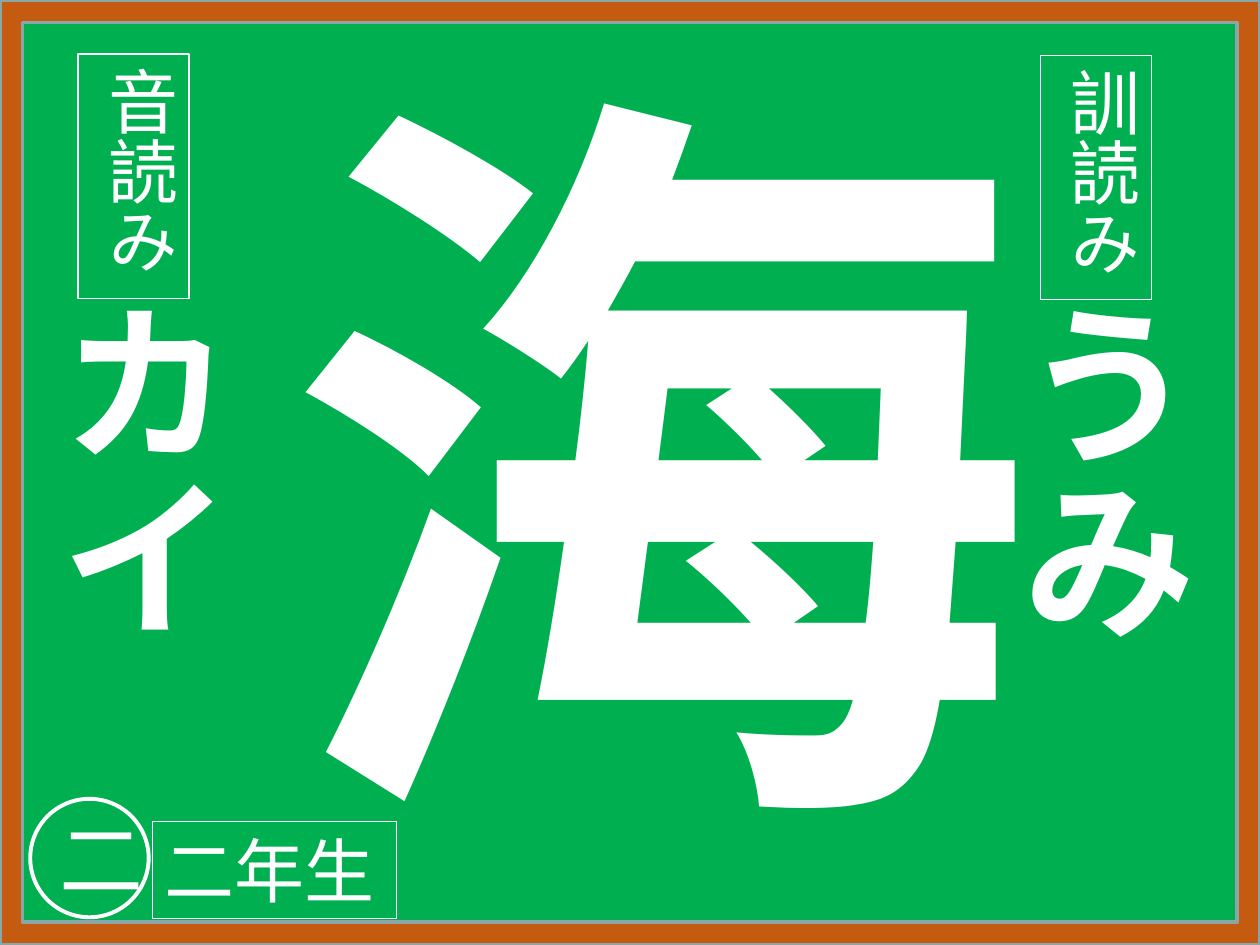
from lxml.etree import SubElement
from pptx import Presentation
from pptx.dml.color import RGBColor
from pptx.enum.shapes import MSO_SHAPE
from pptx.enum.text import MSO_ANCHOR, MSO_AUTO_SIZE, PP_ALIGN
from pptx.oxml.ns import qn
from pptx.util import Inches, Pt

FONT = "Noto Sans CJK JP"
WHITE = "FFFFFF"
BOARD_GREEN = "00B050"
WOOD = "C55A11"
WOOD_EDGE = "8AA6A8"


def color(value):
    return RGBColor.from_string(value)


def write(shape, text, size, bold=False, centered=False, vertical=False,
          middle=False, grow=False, wrap=True):
    frame = shape.text_frame
    frame.word_wrap = wrap
    frame.auto_size = MSO_AUTO_SIZE.SHAPE_TO_FIT_TEXT if grow else MSO_AUTO_SIZE.NONE
    frame.vertical_anchor = MSO_ANCHOR.MIDDLE if middle else MSO_ANCHOR.TOP
    if vertical:
        frame._txBody.bodyPr.set("vert", "eaVert")
    paragraph = frame.paragraphs[0]
    paragraph.alignment = PP_ALIGN.CENTER if centered else PP_ALIGN.LEFT
    paragraph.add_run().text = text
    font = paragraph.font
    font.size = Pt(size)
    font.bold = bold
    font.color.rgb = color(WHITE)
    font.name = FONT
    SubElement(font._element, qn("a:ea")).set("typeface", FONT)


def add_outline(page, kind, left, top, width, height, line, weight, fill=None):
    shape = page.shapes.add_shape(
        kind, Inches(left), Inches(top), Inches(width), Inches(height))
    shape.shadow.inherit = False
    if fill:
        shape.fill.solid()
        shape.fill.fore_color.rgb = color(fill)
    else:
        shape.fill.background()
    shape.line.color.rgb = color(line)
    shape.line.width = Pt(weight)
    return shape


def add_board_frame(page):
    frame = add_outline(page, MSO_SHAPE.FRAME, 0, 0, 10, 7.5, WOOD_EDGE, 2, WOOD)
    frame.adjustments[0] = 0.024


def add_vertical_text(page, text, left, top, width, height, size, **layout):
    box = page.shapes.add_textbox(
        Inches(left), Inches(top), Inches(width), Inches(height))
    write(box, text, size, bold=True, centered=True, vertical=True, **layout)


def add_label(page, text, left, top, width, height, vertical=False):
    label = add_outline(
        page, MSO_SHAPE.RECTANGLE, left, top, width, height, WHITE, 0.75)
    write(label, text, 40, vertical=vertical, grow=True)


def add_grade_badge(page, text):
    badge = add_outline(page, MSO_SHAPE.OVAL, 0.24, 6.34, 0.94, 0.94, WHITE, 2.25)
    write(badge, text, 48, centered=True, middle=True)


def main():
    deck = Presentation()
    deck.slide_width = Inches(10)
    deck.slide_height = Inches(7.5)
    page = deck.slides.add_slide(deck.slide_layouts[6])
    page.background.fill.solid()
    page.background.fill.fore_color.rgb = color(BOARD_GREEN)

    add_board_frame(page)
    add_vertical_text(page, "海", 1.81, 0.55, 6.38, 6.27, 432, middle=True)
    for reading, left, top in (("うみ", 7.76, 2.26), ("カイ", 0.12, 2.25)):
        add_vertical_text(page, reading, left, top, 1.88, 2.85, 100,
                          grow=True, wrap=False)
    for heading, left, top in (("訓読み", 8.26, 0.44), ("音読み", 0.62, 0.43)):
        add_label(page, heading, left, top, 0.88, 1.94, vertical=True)
    add_grade_badge(page, "二")
    add_label(page, "二年生", 1.21, 6.52, 1.94, 0.77)

    deck.save("out.pptx")


if __name__ == "__main__":
    main()
